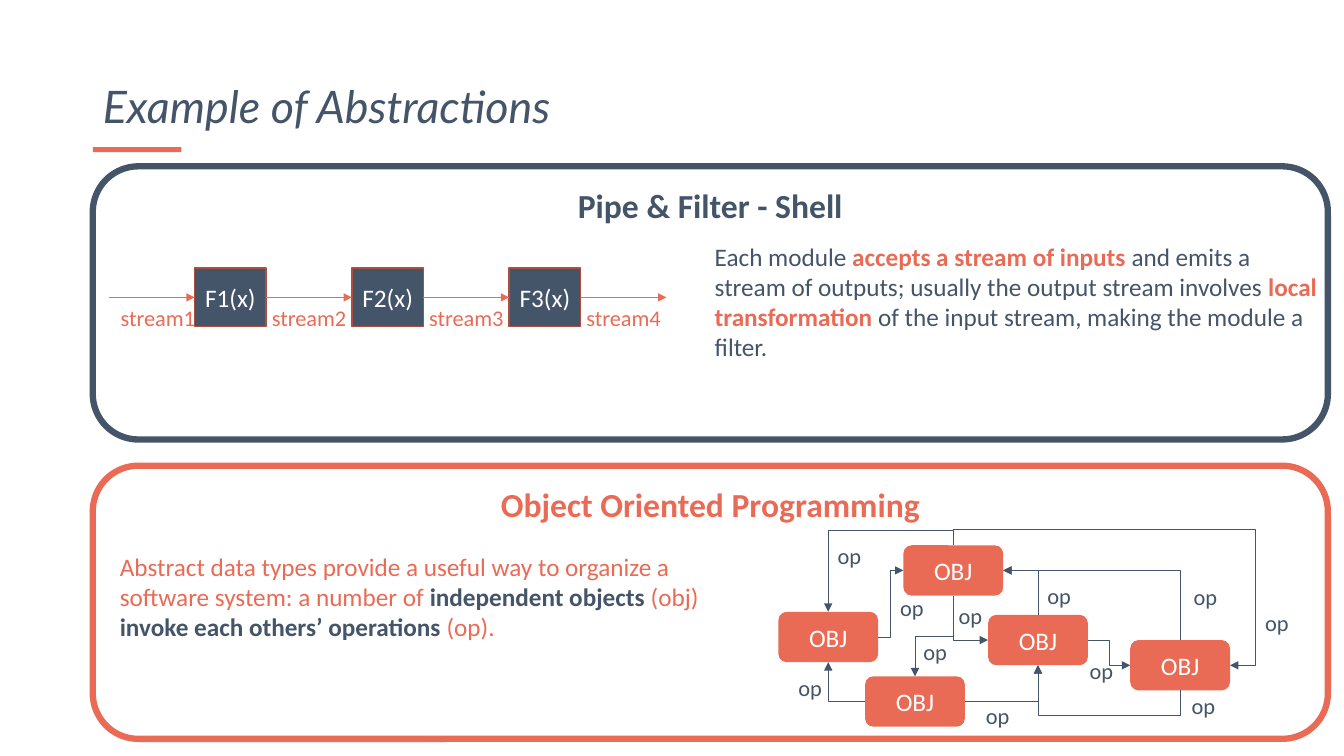
from lxml.etree import SubElement
from pptx import Presentation
from pptx.dml.color import RGBColor
from pptx.enum.shapes import MSO_CONNECTOR as Link, MSO_SHAPE as Form
from pptx.enum.text import MSO_ANCHOR as Anchor, MSO_AUTO_SIZE as Fit, PP_ALIGN as Align
from pptx.oxml.ns import qn
from pptx.util import Pt

SCALE = 9144  # EMU per px, 100 px to the inch
NAVY, CORAL, RUST, WHITE = "445469", "E96B56", "AC4F3E", "FFFFFF"


def px(n):
    return round(n * SCALE)


def color(code):
    return RGBColor.from_string(code)


def write(frame, runs, size, align=Align.LEFT, face="Calibri"):
    """Add (text, colour, bold) runs to the first paragraph."""
    para = frame.paragraphs[0]
    para.alignment = align
    for text, code, bold in runs:
        run = para.add_run()
        run.text = text
        run.font.name, run.font.size, run.font.bold = face, Pt(size), bold
        run.font.color.rgb = color(code)
    return para


def block(slide, form, box, fill=None, line=None, width=1):
    shape = slide.shapes.add_shape(form, *map(px, box))
    shape.shadow.inherit = False
    if fill:
        shape.fill.solid()
        shape.fill.fore_color.rgb = color(fill)
    else:
        shape.fill.background()
    if line:
        shape.line.color.rgb = color(line)
        shape.line.width = Pt(width)
    else:
        shape.line.fill.background()
    return shape


def node(slide, form, box, text, fill, line=None):
    shape = block(slide, form, box, fill, line)
    shape.text_frame.vertical_anchor = Anchor.MIDDLE
    write(shape.text_frame, [(text, WHITE, False)], 18, Align.CENTER)
    return shape


def label(slide, box, runs, size, wrap=False, align=Align.LEFT):
    frame = slide.shapes.add_textbox(*map(px, box)).text_frame
    frame.word_wrap = wrap
    frame.auto_size = Fit.SHAPE_TO_FIT_TEXT
    write(frame, runs, size, align)


def arrow(slide, kind, start, end, code):
    """Draw a thin arrow between two points given in EMU."""
    line = slide.shapes.add_connector(kind, *start, *end)
    line.line.color.rgb = color(code)
    line.line.width = Pt(0.5)
    SubElement(line.line._get_or_add_ln(), qn("a:tailEnd"), type="triangle")
    SubElement(line.element.spPr, qn("a:effectLst"))
    return line


def port(shape, side):
    """Middle of a side: 0 top, 1 left, 2 bottom, 3 right."""
    fx, fy = ((0.5, 0), (0, 0.5), (0.5, 1), (1, 0.5))[side]
    return round(shape.left + fx * shape.width), round(shape.top + fy * shape.height)


def elbow(slide, first, out, last, into, bends):
    """Join two sides; bends are the fractions that place the inner legs."""
    (ax, ay), (bx, by) = start, end = port(first, out), port(last, into)
    line = arrow(slide, Link.ELBOW, start, end, NAVY)
    line.begin_connect(first, out)
    line.end_connect(last, into)
    dx, dy = bx - ax, by - ay
    wide, high, turn = abs(dx), abs(dy), 0
    flip_h, flip_v = dx < 0, dy < 0
    if out in (0, 2):  # first leg is vertical: turn the connector
        wide, high = high, wide
        turn = 270 if out == 0 or dx > 0 else 90
        flip_h, flip_v = (dy > 0, dx < 0) if turn == 270 else (dy < 0, dx > 0)
    line.left, line.top = (ax + bx - wide) // 2, (ay + by - high) // 2
    line.width, line.height = wide, high
    props = line.element.spPr
    xfrm = props.find(qn("a:xfrm"))
    xfrm.set("rot", str(turn * 60000))
    xfrm.set("flipH", str(int(flip_h)))
    xfrm.set("flipV", str(int(flip_v)))
    geom = props.find(qn("a:prstGeom"))
    geom.set("prst", f"bentConnector{2 + len(bends)}")
    for i, part in enumerate(bends, 1):
        SubElement(geom.find(qn("a:avLst")), qn("a:gd"), name=f"adj{i}",
                   fmla=f"val {round(part * 100000)}")


def header(slide, x, y):
    block(slide, Form.RECTANGLE, (x, y + 128, 88, 5), CORAL)
    title = slide.shapes.title
    title.left, title.top, title.width, title.height = map(px, (x, y, 1150, 119))
    frame = title.text_frame
    frame.auto_size, frame.word_wrap = Fit.NONE, True
    frame.vertical_anchor = Anchor.BOTTOM
    para = write(frame, [("Example of Abstractions", NAVY, False)], 32, face="Lato")
    para.runs[0].font.italic = True
    para.line_spacing, para.space_before = 0.9, Pt(10)


def panel(slide, box, text, code):
    shape = block(slide, Form.ROUNDED_RECTANGLE, box, line=code, width=4.5)
    shape.text_frame.vertical_anchor = Anchor.TOP
    write(shape.text_frame, [(text, code, True)], 24, Align.CENTER)


def pipes(slide, box):
    x, y = box[:2]
    panel(slide, box, "Pipe & Filter - Shell", NAVY)
    side, pitch, left = 71, 156, x + 17
    gap = pitch - side
    spots = [x + 101 + i * pitch for i in range(4)]
    cells = [node(slide, Form.RECTANGLE, (spot, y + 101, side, 58),
                  f"F{i}(x)", NAVY, RUST) for i, spot in enumerate(spots[:3], 1)]
    for i, spot in enumerate(spots):
        line = arrow(slide, Link.STRAIGHT, (px(spot - gap), px(y + 130)),
                     (px(spot), px(y + 130)), CORAL)
        if i > 0:
            line.begin_connect(cells[i - 1], 3)
        if i < len(cells):
            line.end_connect(cells[i], 1)
    for i, spot in enumerate(spots, 1):
        edge = max(left, spot - (gap + 95) // 2)
        label(slide, (edge, y + 132, 95, 37), [(f"stream{i}", CORAL, False)],
              16, align=Align.CENTER)
    label(slide, (x + 607, y + 69, 618, 131), [
        ("Each module ", NAVY, False),
        ("accepts a stream of inputs ", CORAL, True),
        ("and emits a stream of outputs; usually the output stream involves ", NAVY, False),
        ("local transformation ", CORAL, True),
        ("of the input stream, making the module a filter.", NAVY, False),
    ], 18, wrap=True)


def objects(slide, box):
    x, y = box[:2]
    panel(slide, box, "Object Oriented Programming", CORAL)
    label(slide, (x + 17, y + 80, 618, 101), [
        ("Abstract data types provide a useful way to organize a software system: "
         "a number of ", CORAL, False),
        ("independent objects ", NAVY, True),
        ("(obj) ", CORAL, False),
        ("invoke each others’ operations ", NAVY, True),
        ("(op).", CORAL, False),
    ], 18, wrap=True)
    spots = {"west": (680, 145), "north": (804, 79), "mid": (888, 148),
             "east": (1029, 173), "south": (766, 209)}
    nodes = {name: node(slide, Form.ROUNDED_RECTANGLE, (x + dx, y + dy, 99, 50),
                        "OBJ", CORAL) for name, (dx, dy) in spots.items()}
    calls = [
        ("west", 3, "north", 1, [0.5]), ("north", 0, "west", 0, [-0.23]),
        ("north", 2, "mid", 1, []), ("north", 2, "south", 0, [0.5]),
        ("north", 0, "east", 3, [-0.13, 1.09]), ("east", 0, "north", 3, []),
        ("mid", 0, "north", 3, []), ("mid", 3, "east", 1, [0.5]),
        ("east", 2, "mid", 2, [-0.98]), ("south", 1, "west", 2, []),
        ("south", 3, "mid", 2, []),
    ]
    for first, out, last, into, bends in calls:
        elbow(slide, nodes[first], out, nodes[last], into, bends)
    for dx, dy in [(729, 71), (690, 202), (791, 123), (814, 166), (849, 130), (937, 111),
                   (1082, 112), (1153, 137), (979, 185), (876, 230), (1080, 220)]:
        label(slide, (x + dx, y + dy, 44, 37), [("op", NAVY, False)], 16)


def main():
    deck = Presentation()
    deck.slide_width, deck.slide_height = px(1333), px(750)
    slide = deck.slides.add_slide(deck.slide_layouts[5])
    header(slide, 92, 18)
    pipes(slide, (92, 165, 1225, 271))
    objects(slide, (92, 462, 1225, 271))
    deck.save("out.pptx")


if __name__ == "__main__":
    main()
